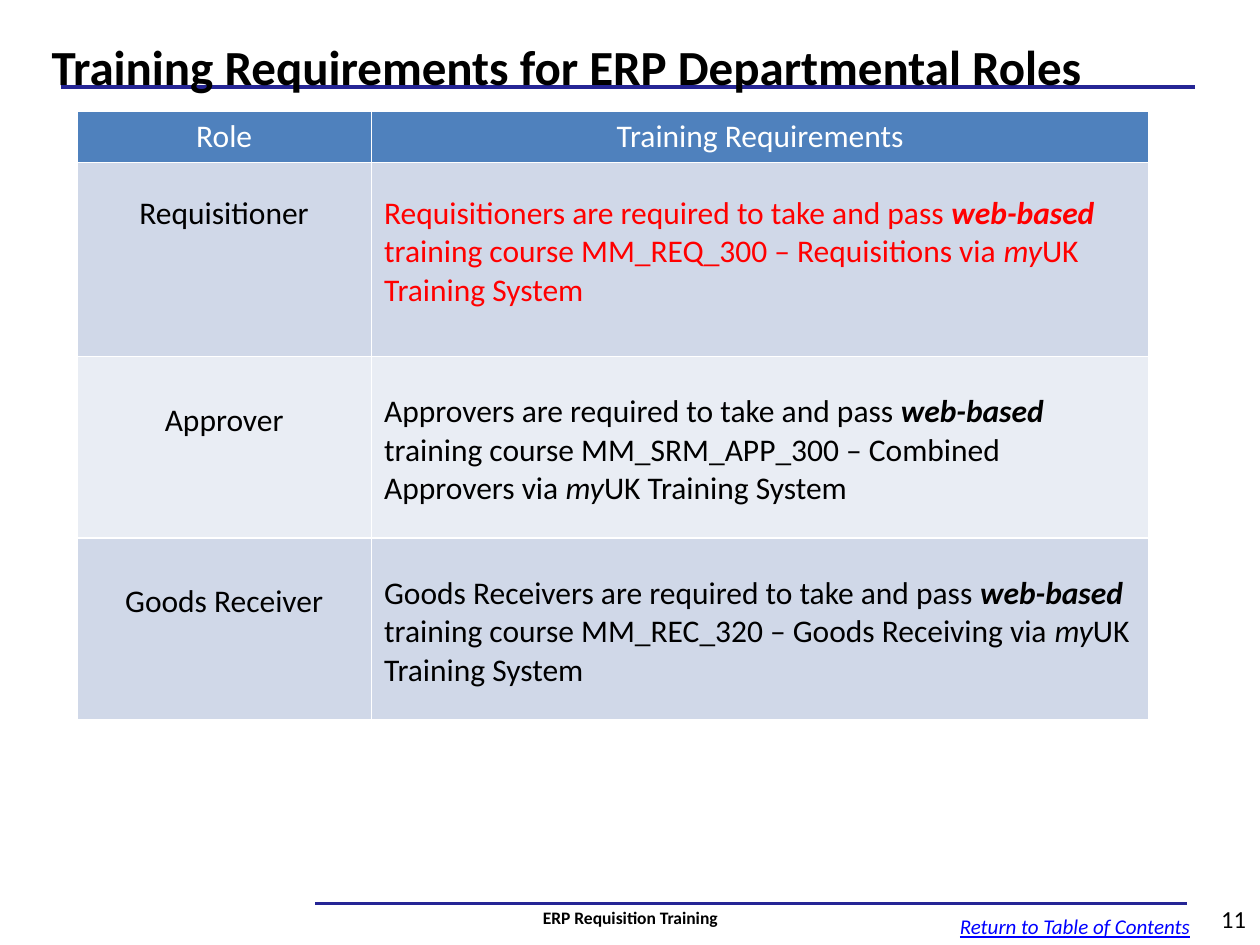
from lxml import etree
from pptx import Presentation
from pptx.dml.color import RGBColor
from pptx.enum.shapes import MSO_CONNECTOR
from pptx.enum.text import MSO_ANCHOR, PP_ALIGN
from pptx.oxml import parse_xml
from pptx.oxml.ns import nsdecls, qn
from pptx.util import Cm, Pt

STRAIGHT = MSO_CONNECTOR.STRAIGHT
TOP, MIDDLE = MSO_ANCHOR.TOP, MSO_ANCHOR.MIDDLE
LEFT, CENTER, RIGHT = PP_ALIGN.LEFT, PP_ALIGN.CENTER, PP_ALIGN.RIGHT

FONT = "Calibri"
BLACK = RGBColor(0x00, 0x00, 0x00)
WHITE = RGBColor(0xFF, 0xFF, 0xFF)
RED = RGBColor(0xFF, 0x00, 0x00)
LINK_BLUE = RGBColor(0x00, 0x00, 0xFF)
RULE_BLUE = RGBColor(0x25, 0x25, 0x95)
HEADER_BLUE = RGBColor(0x4F, 0x81, 0xBD)
BAND_DARK = RGBColor(0xD0, 0xD8, 0xE8)
BAND_LIGHT = RGBColor(0xE9, 0xED, 0xF4)


def add_label(slide, box, text, size, color, alignment=LEFT, anchor=MIDDLE):
    """Add a one-paragraph text box and return its shape."""
    shape = slide.shapes.add_textbox(*[Cm(length) for length in box])
    text_frame = shape.text_frame
    text_frame.text = text
    text_frame.word_wrap = True
    text_frame.vertical_anchor = anchor
    paragraph = text_frame.paragraphs[0]
    paragraph.alignment = alignment
    font = paragraph.runs[0].font
    font.name, font.size, font.color.rgb = FONT, Pt(size), color
    return shape


def fill_cell(cell, runs, color, fill, alignment, margin_top):
    """Write (text, bold, italic) runs into a cell with white borders."""
    paragraph = cell.text_frame.paragraphs[0]
    paragraph.alignment = alignment
    for text, bold, italic in runs:
        run = paragraph.add_run()
        run.text = text
        font = run.font
        font.name, font.size, font.color.rgb = FONT, Pt(18), color
        font.bold, font.italic = bold, italic
    cell.margin_top = Cm(margin_top)
    properties = cell._tc.get_or_add_tcPr()
    for side in ("lnL", "lnR", "lnT", "lnB"):
        properties.append(parse_xml(
            f'<a:{side} {nsdecls("a")} w="{Pt(1)}"><a:solidFill>'
            f'<a:srgbClr val="{WHITE}"/></a:solidFill></a:{side}>'))
    cell.fill.solid()
    cell.fill.fore_color.rgb = fill


presentation = Presentation()
presentation.slide_width, presentation.slide_height = Cm(25.4), Cm(19.05)
slide = presentation.slides.add_slide(presentation.slide_layouts[6])

# Rules under the title and above the footer
for start, end, y, width in [(1.22, 24.08, 1.75, 2.25), (6.35, 23.93, 18.21, 1.5)]:
    rule = slide.shapes.add_connector(STRAIGHT, Cm(start), Cm(y), Cm(end), Cm(y))
    rule.line.color.rgb = RULE_BLUE
    rule.line.width = Pt(width)
    etree.SubElement(rule._element.spPr, qn("a:effectLst"))

title = add_label(slide, (0.79, 0.23, 23.34, 2.03),
                  "Training Requirements for ERP Departmental Roles", 28, BLACK)
title_paragraph = title.text_frame.paragraphs[0]
title_paragraph.line_spacing = 1.15
title_paragraph.space_after = Pt(6)
title_paragraph.runs[0].font.bold = True

# Roles table
COLUMN_WIDTHS = [5.94, 15.67]
ROW_HEIGHTS = [1.04, 3.91, 3.66, 3.66]
HEADERS = ["Role", "Training Requirements"]
# role, course, text colour, band colour, top margins of the two cells
ROLES = [
    ("Requisitioner", "MM_REQ_300 – Requisitions", RED, BAND_DARK, (0.64, 0.64)),
    ("Approver", "MM_SRM_APP_300 – Combined Approvers", BLACK, BAND_LIGHT, (0.9, 0.73)),
    ("Goods Receiver", "MM_REC_320 – Goods Receiving", BLACK, BAND_DARK, (0.9, 0.73)),
]

table = slide.shapes.add_table(
    len(ROW_HEIGHTS), len(COLUMN_WIDTHS), Cm(1.55), Cm(2.24),
    Cm(sum(COLUMN_WIDTHS)), Cm(sum(ROW_HEIGHTS))).table
for column, width in zip(table.columns, COLUMN_WIDTHS):
    column.width = Cm(width)
for row, height in zip(table.rows, ROW_HEIGHTS):
    row.height = Cm(height)

for column_index, header in enumerate(HEADERS):
    fill_cell(table.cell(0, column_index), [(header, False, False)],
              WHITE, HEADER_BLUE, CENTER, 0.13)

for row_index, (role, course, color, band, margins) in enumerate(ROLES, start=1):
    requirement = [
        (f"{role}s are required to take and pass ", False, False),
        ("web-based", True, True),
        (f" training course {course} via ", False, False),
        ("my", False, True),
        ("UK Training System", False, False),
    ]
    fill_cell(table.cell(row_index, 0), [(role, False, False)],
              BLACK, band, CENTER, margins[0])
    fill_cell(table.cell(row_index, 1), requirement, color, band, LEFT, margins[1])

# Footer
contents_link = add_label(slide, (19.1, 18.29, 5.18, 0.76),
                          "Return to Table of Contents", 12, LINK_BLUE, anchor=TOP)
contents_link.text_frame.word_wrap = False
link_font = contents_link.text_frame.paragraphs[0].runs[0].font
link_font.italic = link_font.underline = True

add_label(slide, (23.85, 18.01, 1.52, 1.02), "11", 14, BLACK, RIGHT)
footer = add_label(slide, (5.11, 17.98, 15.19, 1.02),
                   "ERP Requisition Training", 10, BLACK, CENTER)
footer.text_frame.paragraphs[0].runs[0].font.bold = True

presentation.save("out.pptx")
